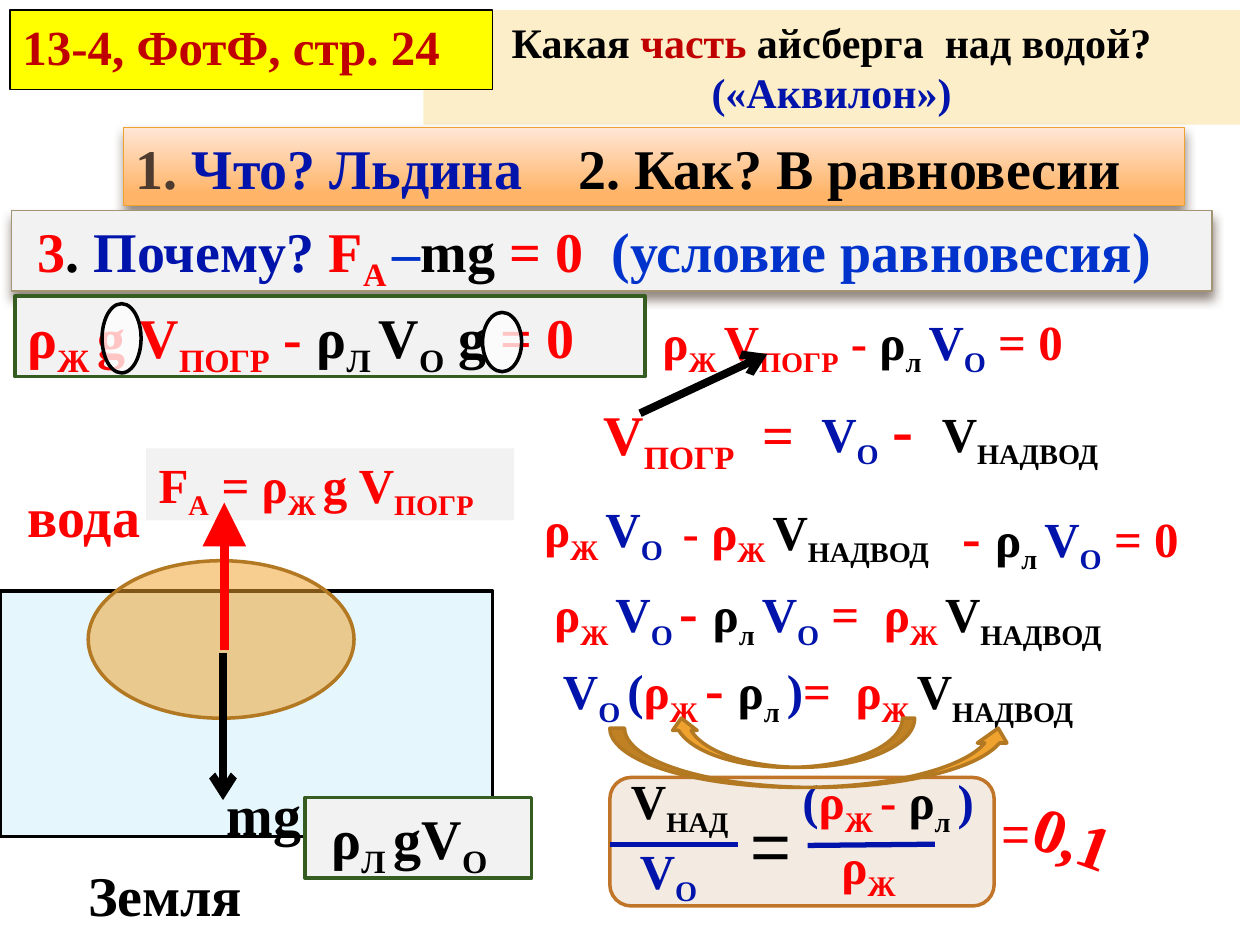
import pptx
import pptx.util
import pptx.dml.color
import pptx.enum.dml
import pptx.enum.shapes
import pptx.enum.text
import pptx.oxml
import pptx.oxml.ns
from lxml import etree

Inches = pptx.util.Inches
Pt = pptx.util.Pt
RGBColor = pptx.dml.color.RGBColor
MSO_SHAPE = pptx.enum.shapes.MSO_SHAPE
qn = pptx.oxml.ns.qn

BLACK = RGBColor(0x00, 0x00, 0x00)
WHITE = RGBColor(0xFF, 0xFF, 0xFF)
RED = RGBColor(0xFF, 0x00, 0x00)
DARK_RED = RGBColor(0xC0, 0x00, 0x00)
NAVY = RGBColor(0x00, 0x14, 0xAC)
BLUE = RGBColor(0x00, 0x33, 0xCC)
BROWN = RGBColor(0x4E, 0x3B, 0x30)
CREAM = RGBColor(0xFB, 0xEE, 0xC9)
YELLOW = RGBColor(0xFF, 0xFF, 0x00)
GREY = RGBColor(0xF2, 0xF2, 0xF2)
TAUPE = RGBColor(0xA1, 0x95, 0x74)
GREEN = RGBColor(0x36, 0x5D, 0x21)
WATER = RGBColor(0x00, 0xB0, 0xF0)
ORANGE = RGBColor(0xF0, 0xA2, 0x2E)
OCHRE = RGBColor(0xB2, 0x78, 0x22)
COPPER = RGBColor(0xC1, 0x75, 0x29)
SAND = RGBColor(0xF3, 0xEA, 0xE2)
PEACH = [RGBColor(0xFF, 0xE7, 0xD7), RGBColor(0xFF, 0xB4, 0x68)]

SHADOW = (
    '<a:effectLst xmlns:a="http://schemas.openxmlformats.org/drawingml/2006/main">'
    '<a:outerShdw blurRad="76200" dist="50800" dir="5400000" rotWithShape="0">'
    '<a:srgbClr val="4E3B30"><a:alpha val="60000"/></a:srgbClr>'
    '</a:outerShdw></a:effectLst>'
)


def add_shape(preset, box, fill, line, alpha=100):
    shape = slide.shapes.add_shape(preset, *map(Inches, box))
    shape.shadow.inherit = False
    shape.fill.solid()
    shape.fill.fore_color.rgb = fill
    if alpha < 100:
        colour = shape._element.spPr.find(qn("a:solidFill"))[0]
        etree.SubElement(colour, qn("a:alpha")).set("val", str(alpha * 1000))
    shape.line.color.rgb = line
    shape.line.width = Pt(2)
    return shape


def add_text(box, runs, size=28, fill=None, line=None, width=2, wrap=True, font="Times New Roman", parent=None):
    text = (parent or slide).shapes.add_textbox(*map(Inches, box))
    if fill is not None:
        text.fill.solid()
        text.fill.fore_color.rgb = fill
    if line is not None:
        text.line.color.rgb = line
        text.line.width = Pt(width)
    frame = text.text_frame
    frame.word_wrap = wrap
    if not wrap:
        frame.auto_size = pptx.enum.text.MSO_AUTO_SIZE.SHAPE_TO_FIT_TEXT
    for colour, marked, *own_size in runs:
        for index, part in enumerate(marked.split("_")):
            if part:
                run = frame.paragraphs[0].add_run()
                run.text = part
                run.font.name = font
                run.font.size = Pt(own_size[0] if own_size else size)
                run.font.bold = font != "Arial"
                run.font.color.rgb = colour
                if index % 2:
                    run._r.get_or_add_rPr().set("baseline", "-25000")
    return text


presentation = pptx.Presentation()
presentation.slide_width = Inches(10)
presentation.slide_height = Inches(7.5)
slide = presentation.slides.add_slide(presentation.slide_layouts[6])

add_shape(MSO_SHAPE.ROUNDED_RECTANGLE, (4.84, 6.17, 3.05, 1.02), SAND, COPPER)
question = add_text(
    (3.36, 0.08, 6.48, 0.91),
    [(BLACK, "Какая "), (DARK_RED, "часть"), (BLACK, " айсберга  над водой? "), (NAVY, "(«Аквилон»)")],
    24, CREAM)
question.text_frame.paragraphs[0].alignment = pptx.enum.text.PP_ALIGN.CENTER
add_shape(MSO_SHAPE.RECTANGLE, (0, 4.69, 3.91, 1.95), WATER, BLACK, 10)
add_shape(MSO_SHAPE.OVAL, (0.7, 4.45, 2.11, 1.25), ORANGE, OCHRE, 53)

add_text((1.7, 6.14, 0.8, 0.64), [(BLACK, "mg")], 32, wrap=False)
add_text((0.6, 6.78, 1.48, 0.64), [(BLACK, "Земля")], 32)
add_text((0.12, 3.77, 1.33, 0.64), [(RED, "вода")], 32)
add_text((1.16, 3.56, 2.92, 0.57), [(RED, "F_A  _= ρ_Ж _g V_ПОГР")], fill=GREY)

what_and_how = add_text(
    (0.98, 1.01, 8.42, 0.62),
    [(BROWN, "1."), (NAVY, " Что? Льдина\t"), (BLACK, "2. Как? В равновесии")],
    32, line=ORANGE, width=0.79)
what_and_how.fill.gradient()
what_and_how.fill.gradient_angle = 270
for stop, colour, position in zip(what_and_how.fill.gradient_stops, PEACH, (0, 0.85)):
    stop.color.rgb = colour
    stop.position = position
tabs = etree.SubElement(what_and_how.text_frame.paragraphs[0]._p.get_or_add_pPr(), qn("a:tabLst"))
etree.SubElement(tabs, qn("a:tab"), pos=str(Inches(3.51)), algn="l")

why = add_text(
    (0.09, 1.67, 9.53, 0.64),
    [(RED, " 3"), (BLACK, ". "), (NAVY, "Почему? "), (RED, "F_A _"), (BLUE, "–"), (BLACK, "mg"),
     (RED, " = 0  "), (BLUE, "(условие равновесия)")],
    32, GREY, TAUPE, 0.79)
for banner in (what_and_how, why):
    banner._element.spPr.append(pptx.oxml.parse_xml(SHADOW))

add_text((0.12, 2.35, 5, 0.64),
         [(RED, "ρ_Ж _g V_ПОГР_ - "), (BLACK, "ρ_Л _V_О_ g "), (RED, "= 0")], 32, GREY, GREEN)

ice_mass = [(BLACK, "ρ_л _"), (NAVY, "V_О_ ")]
displaced = [(RED, "ρ_Ж _"), (NAVY, "V_О _")]
above_water = [(RED, "=  ρ_Ж _"), (BLACK, "V_НАДВОД_")]
minus = (RED, "- ", 32)
equations = [
    ((5.16, 2.42, 3.83, 0.57), [(RED, "ρ_Ж _V_ПОГР_ - "), *ice_mass, (RED, "= 0")]),
    ((6.42, 3.04, 2.73, 0.71), [(NAVY, "V_О  _"), (RED, "- ", 36), (RED, " "), (BLACK, "V_НАДВОД_")]),
    ((7.54, 3.93, 2.11, 0.64), [minus, *ice_mass, (RED, "= 0")]),
    ((4.3, 4.53, 5.7, 0.64), [*displaced, minus, *ice_mass, *above_water]),
    ((4.37, 5.14, 5, 0.64),
     [(NAVY, "V_О _("), (RED, "ρ_Ж _"), minus, (BLACK, "ρ_л _"), (NAVY, ")"), *above_water]),
    ((4.69, 3.12, 1.95, 0.64), [(RED, "V_ПОГР_  =", 32)]),
    ((4.22, 3.91, 1.41, 0.57), [(RED, "ρ_Ж _"), (NAVY, "V_О_")]),
    ((5.32, 3.93, 2.58, 0.57), [(RED, "- ρ_Ж _"), (BLACK, "V_НАДВОД_")]),
]
for box, runs in equations:
    add_text(box, runs)

volume_ratio = slide.shapes.add_group_shape()
add_text((5.86, 6.31, 0.55, 0.77), [(BLACK, "=")], 40, font="Arial", parent=volume_ratio)
add_text((4.91, 6.07, 1.06, 0.57), [(BLACK, "V_НАД_")], wrap=False, parent=volume_ratio)
add_text((4.98, 6.62, 0.86, 0.57), [(NAVY, "V_О_")], parent=volume_ratio)
density_ratio = slide.shapes.add_group_shape()
add_text((6.27, 6.07, 1.88, 0.57),
         [(NAVY, "("), (RED, "ρ_Ж _- "), (BLACK, "ρ_л _"), (NAVY, ")")], parent=density_ratio)
add_text((6.58, 6.58, 1.17, 0.57), [(RED, "ρ_Ж_")], parent=density_ratio)

add_text((7.85, 6.32, 0.56, 0.57), [(RED, "=")], font="Arial")
answer = add_text((8.11, 6.29, 0.83, 0.71), [(RED, "0,1")], 36, wrap=False)
answer.rotation = 20.1

for crossed_out_g in ((3.83, 2.48, 0.31, 0.47), (0.81, 2.41, 0.31, 0.55)):
    add_shape(MSO_SHAPE.OVAL, crossed_out_g, WHITE, BLACK, 77)

for parent, ends, colour, width, head in [
    (slide, (1.77, 5.18, 1.77, 6.35), BLACK, 4.5, {"type": "arrow"}),
    (slide, (1.78, 5.16, 1.78, 3.99), RED, 5, {"type": "triangle", "w": "lg", "len": "lg"}),
    (slide, (5.08, 3.28, 6.09, 2.81), BLACK, 4.5, {"type": "arrow"}),
    (volume_ratio, (4.84, 6.7, 5.86, 6.7), NAVY, 3, None),
    (density_ratio, (6.41, 6.71, 7.42, 6.7), NAVY, 3, None),
]:
    line = parent.shapes.add_connector(pptx.enum.shapes.MSO_CONNECTOR.STRAIGHT, *map(Inches, ends))
    line.line.color.rgb = colour
    line.line.width = Pt(width)
    if head:
        etree.SubElement(line.line._get_or_add_ln(), qn("a:tailEnd"), head)
    etree.SubElement(line._element.spPr, qn("a:effectLst"))

for box, flips in [((5.31, 5.7, 1.95, 0.39), ("flipH", "flipV")), ((4.84, 5.78, 3.2, 0.47), ("flipV",))]:
    swap_arrow = add_shape(MSO_SHAPE.CURVED_DOWN_ARROW, box, ORANGE, OCHRE)
    for flip in flips:
        swap_arrow._element.spPr.find(qn("a:xfrm")).set(flip, "1")

add_text((2.42, 6.33, 1.8, 0.64), [(RED, " "), (BLACK, "ρ_Л _gV_О_")], 32, GREY, GREEN)
add_text((0.08, 0.08, 3.83, 0.63), [(DARK_RED, "13-4, ФотФ, стр. 24")], 28, YELLOW, BLACK, 0.75)

presentation.save("out.pptx")
